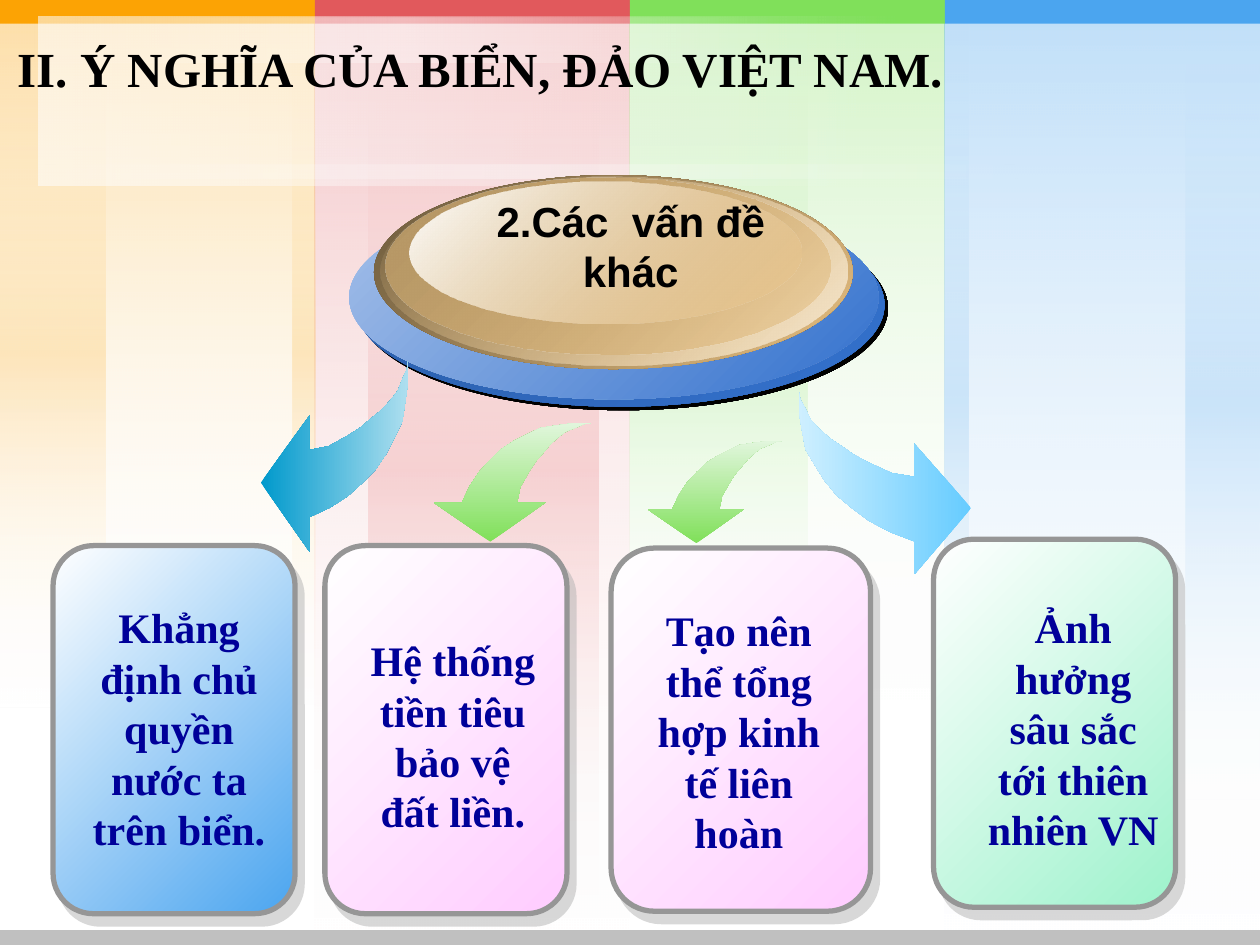
from lxml.etree import SubElement
from pptx import Presentation
from pptx.dml.color import RGBColor
from pptx.enum.shapes import MSO_SHAPE
from pptx.enum.text import MSO_ANCHOR, MSO_AUTO_SIZE, PP_ALIGN
from pptx.oxml.ns import qn
from pptx.util import Cm, Pt

COLORS = {
    "orange": "FCA304", "red": "E1595C", "green": "80E05A", "blue": "4BA5EF",
    "white": "FFFFFF", "black": "000000", "navy": "000099", "bar": "C0C0C0",
    "border": "969696", "shade": "B2B2B2", "pink": "FFCCFF", "mint": "9EF2CC",
    "sky": "66CCFF", "pale_sky": "CEEFFF", "teal": "0099CC", "pale_teal": "AEDFEF",
    "pale_green": "E1F6DC", "rim_dark": "2A5DA8", "rim": "3371CD", "rim_light": "A5C0E9",
    "bronze": "6A583B", "tan": "B69765", "gold": "E6BF80", "cream": "F6E9D3",
}
SERIF, SANS = "Times New Roman", "Arial"

# Curved arrow in unit coordinates: tail at (0, 0), tip at (1, 0.64)
ARROW = [
    (0, 0), (0, .11), (.02, .22), (.04, .32), (.09, .4), (.15, .49), (.22, .57),
    (.31, .64), (.41, .71), (.53, .77), (.67, .82), (.67, 1), (1, .64), (.67, .29),
    (.67, .47), (.61, .46), (.54, .45), (.47, .42), (.4, .39), (.32, .35),
    (.26, .31), (.18, .26), (.12, .21), (.07, .16), (.04, .1), (.01, .05),
]
# Direction: how a unit point lands in the arrow's box, and its gradient angle
DIRECTIONS = {
    "right": (lambda u, v: (u, v), 180),
    "left": (lambda u, v: (1 - u, v), 0),
    "down": (lambda u, v: (1 - v, u), 270),
}


def write_text(frame, text, font=SERIF, size=24, color="navy", align=PP_ALIGN.CENTER):
    frame.word_wrap = True
    frame.vertical_anchor = MSO_ANCHOR.TOP
    paragraph = frame.paragraphs[0]
    paragraph.alignment = align
    run = paragraph.add_run()
    run.text = text
    run.font.name = font
    run.font.size = Pt(size)
    run.font.bold = True
    run.font.color.rgb = RGBColor.from_string(COLORS[color])


def add_color(parent, color, alpha=100):
    element = SubElement(parent, qn("a:srgbClr"), val=COLORS[color])
    if alpha < 100:
        SubElement(element, qn("a:alpha"), val=str(alpha * 1000))


class SlideBuilder:
    def __init__(self, slide):
        self.slide = slide
        self.shapes = slide.shapes

    def paint(self, shape, fill, angle=90, line=None, shadow=None):
        """Fill is a colour name or a list of (position, colour, alpha) stops."""
        if isinstance(fill, str):
            shape.fill.solid()
            shape.fill.fore_color.rgb = RGBColor.from_string(COLORS[fill])
        else:
            shape.fill.background()
            properties = shape.element.spPr
            gradient = properties.makeelement(qn("a:gradFill"), {"rotWithShape": "1"})
            stops = SubElement(gradient, qn("a:gsLst"))
            for position, color, alpha in fill:
                stop = SubElement(stops, qn("a:gs"), pos=str(position * 1000))
                add_color(stop, color, alpha)
            SubElement(gradient, qn("a:lin"), ang=str(angle * 60000), scaled="0")
            properties.replace(properties.find(qn("a:noFill")), gradient)
        if line:
            shape.line.color.rgb = RGBColor.from_string(COLORS[line])
            shape.line.width = Pt(3)
        else:
            shape.line.fill.background()
        shape.shadow.inherit = False
        if shadow:
            color, alpha, distance, direction = shadow
            effects = shape.element.spPr.find(qn("a:effectLst"))
            outer = SubElement(effects, qn("a:outerShdw"), blurRad="0",
                               dist=str(Pt(distance)), dir=str(direction * 60000),
                               algn="ctr", rotWithShape="0")
            add_color(outer, color, alpha)

    def shape(self, kind, box, fill, rotation=0, **style):
        shape = self.shapes.add_shape(kind, *map(Cm, box))
        shape.rotation = rotation
        self.paint(shape, fill, **style)

    def rectangle(self, box, fill, rotation=0):
        self.shape(MSO_SHAPE.RECTANGLE, box, fill, rotation)

    def ellipse(self, box, start, end, **style):
        self.shape(MSO_SHAPE.OVAL, box, [(0, *start), (100, *end)], angle=45, **style)

    def arrow(self, box, direction, start, end):
        left, top, width, height = box
        place, angle = DIRECTIONS[direction]
        points = [(Cm(left + x * width), Cm(top + y * height))
                  for x, y in (place(u, v) for u, v in ARROW)]
        builder = self.shapes.build_freeform(*points[0])
        builder.add_line_segments(points[1:], close=True)
        self.paint(builder.convert_to_shape(), [(0, start, 100), (100, end, 100)], angle)

    def text(self, box, text, **style):
        frame = self.shapes.add_textbox(*map(Cm, box)).text_frame
        write_text(frame, text, **style)
        frame.auto_size = MSO_AUTO_SIZE.SHAPE_TO_FIT_TEXT

    def card(self, box, color, text_box, text):
        self.shape(MSO_SHAPE.ROUNDED_RECTANGLE, box,
                   [(0, "white", 100), (100, color, 100)], angle=45,
                   line="border", shadow=("shade", 50, 7.2, 56))
        self.text(text_box, text)

    def title(self, box, text):
        title = self.shapes.title
        title.left, title.top, title.width, title.height = map(Cm, box)
        write_text(title.text_frame, text, size=28, color="black", align=PP_ALIGN.LEFT)
        title.text_frame.auto_size = MSO_AUTO_SIZE.NONE
        self.shapes.element.append(title.element)  # in front of the background


def draw_background(builder):
    # Colour columns: full fades, with bands tinted in the middle
    column = 6.35
    columns = [
        ("red", 6.35, 19.05, ["full", (7.42, 4.65, 19.05), "full"]),
        ("green", 12.7, 14.27, ["full", (12.7, 3.58, 14.27), "full"]),
        ("blue", 19.05, 18.97, [(19.05, .48, 16.18), "full", (23.9, 1.5, 16.18), "full"]),
        ("orange", 0, 14.27, ["full", (5.89, .46, 14.27), (0, 2.13, 14.27), "full"]),
    ]
    for color, left, height, layers in columns:
        fade = [(0, color, 20), (100, "white", 0)]
        tint = [(0, "white", 0), (50, color, 20), (100, "white", 0)]
        for layer in layers:
            if layer == "full":
                builder.rectangle((left, 0, column, height), fade)
            else:
                band_left, width, band_height = layer
                builder.rectangle((band_left, 0, width, band_height), tint)
    for index, color in enumerate(["orange", "red", "green", "blue"]):
        builder.rectangle((index * column, 0, column, .48), color)

    # White sheen behind the title, turned on its side
    sheet = [(0, "white", 35), (100, "white", 0)]
    glint = [(0, "white", 0), (50, "white", 35), (100, "white", 0)]
    for center_x, center_y, width, height, fill in [
        (10.69, 3.45, .28, 19.66, glint), (9.55, 2.04, 3.4, 17.53, sheet),
        (8.14, .81, .92, 14.96, glint), (9.55, 2.04, 3.4, 17.53, sheet),
    ]:
        builder.rectangle((center_x - width / 2, center_y - height / 2, width, height),
                          fill, rotation=270)
    builder.rectangle((0, 18.75, 25.4, .3), "bar")


def main():
    presentation = Presentation()
    presentation.slide_width, presentation.slide_height = Cm(25.4), Cm(19.05)
    builder = SlideBuilder(presentation.slides.add_slide(presentation.slide_layouts[5]))
    draw_background(builder)
    builder.title((.1, .64, 25.4, 1.9), "II. Ý NGHĨA CỦA BIỂN, ĐẢO VIỆT NAM.")

    # Central disc
    builder.ellipse((7.16, 4.09, 10.67, 4.11), ("rim_dark", 100), ("rim", 100),
                    shadow=("black", 100, 2.8, 45))
    for box, start, end in [
        ((7.04, 3.94, 10.67, 4.11), ("rim_light", 100), ("rim", 100)),
        ((7.54, 3.53, 9.65, 3.91), ("bronze", 100), ("gold", 100)),
        ((7.67, 3.56, 9.42, 3.81), ("gold", 0), ("cream", 100)),
        ((7.77, 3.58, 8.97, 3.56), ("tan", 100), ("gold", 48)),
        ((8.26, 3.66, 7.9, 2.87), ("white", 100), ("gold", 38)),
    ]:
        builder.ellipse(box, start, end)
    builder.text((8.69, 3.81, 8.05, 2.31), "2.Các  vấn đề khác", font=SANS, color="black")

    # Arrows from the disc to the cards
    builder.arrow((5.26, 7.26, 2.97, 3.86), "left", "teal", "pale_teal")
    builder.arrow((8.74, 8.53, 3.18, 2.39), "down", "green", "pale_green")
    builder.arrow((13.06, 8.89, 2.72, 2.06), "down", "green", "pale_green")
    builder.arrow((16.1, 7.87, 3.48, 3.71), "right", "sky", "pale_sky")

    # Cards
    builder.card((1.07, 11, 4.88, 7.42), "blue", (1.5, 12.01, 4.22, 5.38),
                 "Khẳng định chủ quyền nước ta trên biển.")
    builder.card((6.55, 11, 4.88, 7.42), "pink", (7.16, 12.67, 3.94, 4.37),
                 "Hệ thống tiền tiêu bảo vệ đất liền.")
    builder.card((12.32, 11.05, 5.23, 7.32), "pink", (12.75, 12.07, 4.29, 5.38),
                 "Tạo nên thể tổng hợp kinh tế liên hoàn")
    builder.card((18.82, 10.87, 4.88, 7.42), "mint", (19.58, 12.01, 4.11, 5.38),
                 "Ảnh hưởng sâu sắc tới thiên nhiên VN")
    presentation.save("out.pptx")


if __name__ == "__main__":
    main()
